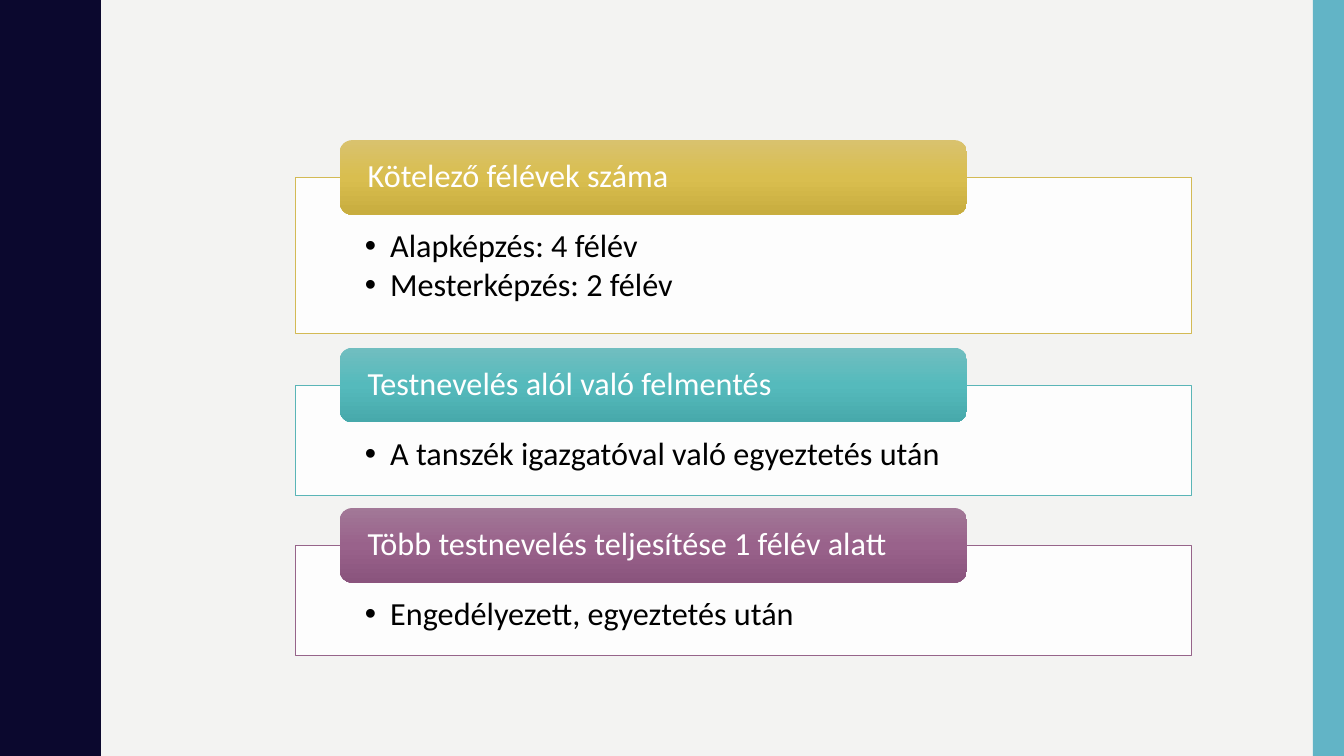
from copy import deepcopy

from lxml.etree import SubElement
from pptx import Presentation
from pptx.dml.color import RGBColor
from pptx.enum.shapes import MSO_SHAPE
from pptx.enum.text import MSO_ANCHOR, PP_ALIGN
from pptx.oxml.ns import qn
from pptx.util import Inches, Pt

SECTIONS = [
    ("Kötelező félévek száma", ["Alapképzés: 4 félév", "Mesterképzés: 2 félév"],
     1.76, 1.55, "D3BA55", ("D9C26E", "D9BE4F", "C8AD3F")),
    ("Testnevelés alól való felmentés", ["A tanszék igazgatóval való egyeztetés után"],
     3.82, 1.09, "5AB5B7", ("71BEC0", "55BABC", "47A9AB")),
    ("Több testnevelés teljesítése 1 félév alatt", ["Engedélyezett, egyeztetés után"],
     5.41, 1.09, "96648A", ("A27897", "99628B", "8A547D")),
]
WAVE_RISE = [
    (0.78, 0), (0.78, 0.07), (0.79, 0.14), (0.8, 0.2), (0.81, 0.25),
    (0.83, 0.29), (0.85, 0.33), (0.87, 0.38), (0.89, 0.42), (0.91, 0.46),
    (0.93, 0.5), (0.95, 0.55), (0.96, 0.61), (0.97, 0.68), (0.97, 0.75),
]
WAVE_PERIOD = 1.5
WAVE_COUNT = 5


def color(value):
    """Turn a hex string into a colour."""
    return RGBColor.from_string(value)


class SlideBuilder:
    """Hold the style and the current slide."""

    font = "Calibri"
    size = Pt(23)

    def __init__(self, page):
        """Keep the page to draw on."""
        self.page = page

    def background(self, fill):
        """Fill the page background."""
        self.page.background.fill.solid()
        self.page.background.fill.fore_color.rgb = color(fill)

    def paint(self, shape, fill):
        """Give a shape a plain fill without line or shadow."""
        shape.shadow.inherit = False
        shape.line.fill.background()
        shape.fill.solid()
        shape.fill.fore_color.rgb = color(fill)

    def box(self, kind, left, top, width, height, fill):
        """Add a preset shape with a plain fill."""
        shape = self.page.shapes.add_shape(
            kind, Inches(left), Inches(top), Inches(width), Inches(height))
        self.paint(shape, fill)
        return shape

    def wave(self, fill):
        """Add the dark band with a wavy right edge."""
        fall = [(x, WAVE_PERIOD - y) for x, y in reversed(WAVE_RISE[1:-1])]
        edge = [(x, y + WAVE_PERIOD * turn)
                for turn in range(WAVE_COUNT) for x, y in WAVE_RISE + fall]
        bottom = WAVE_PERIOD * WAVE_COUNT
        points = edge + [(WAVE_RISE[0][0], bottom), (0, bottom)]
        builder = self.page.shapes.build_freeform(0, 0, scale=Inches(1))
        builder.add_line_segments(points, close=True)
        self.paint(builder.convert_to_shape(), fill)

    def add_text(self, shape, lines, ink, margins, anchor, after, bullet=False):
        """Put left-aligned paragraphs into a shape."""
        frame = shape.text_frame
        frame.word_wrap = True
        frame.vertical_anchor = anchor
        (frame.margin_left, frame.margin_top,
         frame.margin_right, frame.margin_bottom) = map(Inches, margins)
        for index, line in enumerate(lines):
            para = frame.add_paragraph() if index else frame.paragraphs[0]
            para.alignment = PP_ALIGN.LEFT
            para.line_spacing = 0.9
            para.space_after = Pt(after)
            if bullet:
                para.level = 1
                properties = para._p.get_or_add_pPr()
                properties.set("marL", str(Inches(0.25)))
                properties.set("indent", str(-Inches(0.25)))
                SubElement(properties, qn("a:buFont"), typeface="Arial")
                SubElement(properties, qn("a:buChar"), char="•")
            span = para.add_run()
            span.text = line
            span.font.name = self.font
            span.font.size = self.size
            span.font.color.rgb = color(ink)

    def panel(self, lines, top, height, line):
        """Add a translucent white panel with bullets."""
        shape = self.box(MSO_SHAPE.RECTANGLE, 2.93, top, 8.89, height, "FFFFFF")
        tint = shape._element.spPr.find(qn("a:solidFill"))[0]
        SubElement(tint, qn("a:alpha"), val="90000")
        shape.line.color.rgb = color(line)
        shape.line.width = Pt(0.5)
        self.add_text(shape, lines, "000000", (0.69, 0.52, 0.69, 0.18),
                      MSO_ANCHOR.TOP, 3, bullet=True)

    def heading(self, text, top, shades):
        """Add a rounded heading with a vertical gradient."""
        shape = self.box(MSO_SHAPE.ROUNDED_RECTANGLE, 3.37, top, 6.22, 0.74, shades[1])
        shape.fill.gradient()
        shape.fill.gradient_angle = 270
        stops = shape._element.spPr.find(qn("a:gradFill")).find(qn("a:gsLst"))
        stops.insert(1, deepcopy(stops[0]))
        for index, (stop, shade) in enumerate(zip(shape.fill.gradient_stops, shades)):
            stop.position = index / 2
            stop.color.rgb = color(shade)
        self.add_text(shape, [text], "FFFFFF", (0.24, 0, 0.24, 0), MSO_ANCHOR.MIDDLE, 8)


def main():
    """Build the slide and save it."""
    deck = Presentation()
    deck.slide_width = Inches(13.33)
    deck.slide_height = Inches(7.5)
    builder = SlideBuilder(deck.slides.add_slide(deck.slide_layouts[6]))
    builder.background("F3F3F2")
    builder.wave("0B082E")
    builder.box(MSO_SHAPE.RECTANGLE, 13.02, 0, 0.31, 7.5, "62B4C6")
    for title, lines, top, height, line, shades in SECTIONS:
        builder.panel(lines, top, height, line)
        builder.heading(title, top - 0.37, shades)
    deck.save("out.pptx")


if __name__ == "__main__":
    main()
